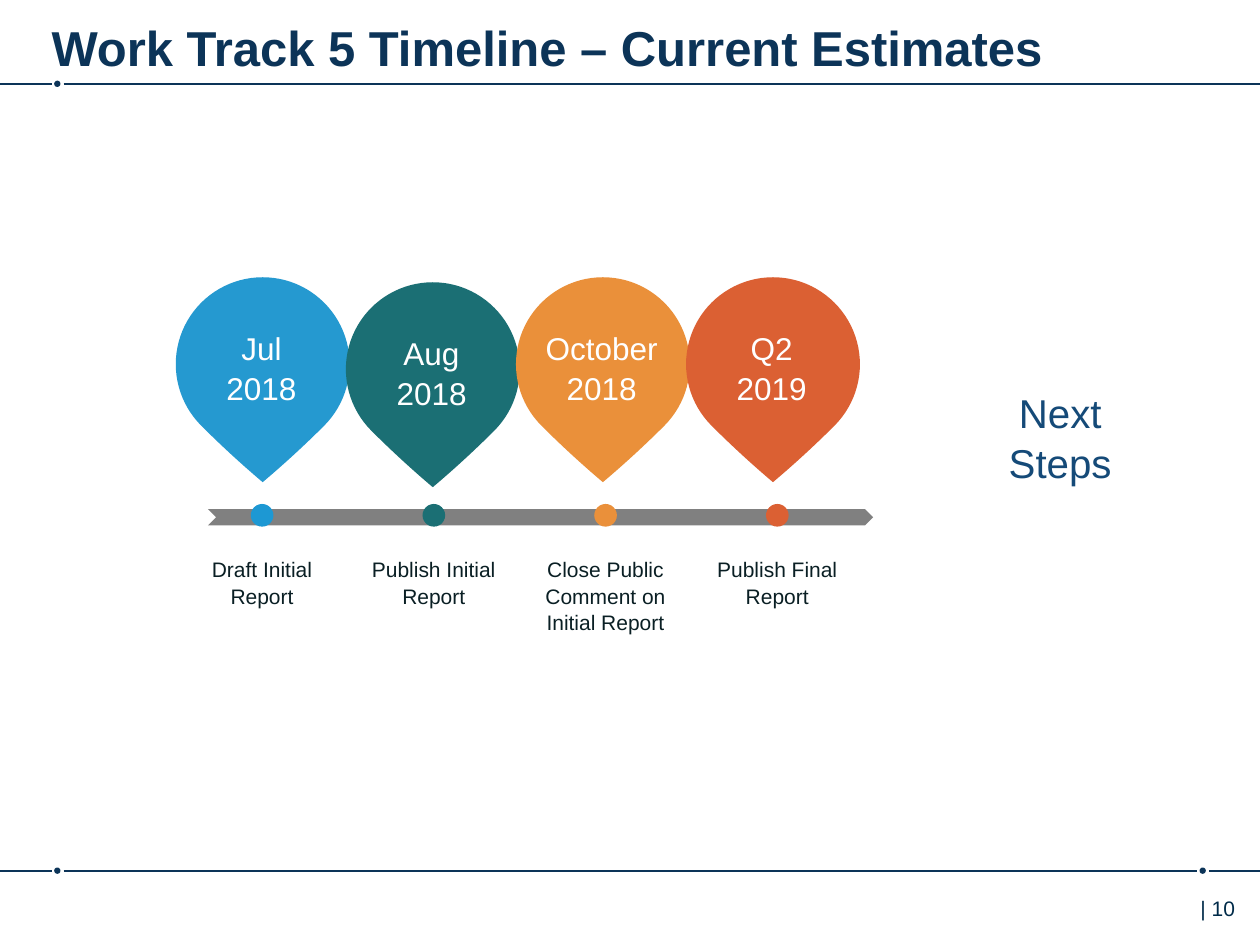
from lxml.etree import SubElement
from pptx import Presentation
from pptx.dml.color import RGBColor
from pptx.enum.shapes import MSO_CONNECTOR, MSO_SHAPE
from pptx.enum.text import MSO_ANCHOR, PP_ALIGN
from pptx.oxml.ns import qn
from pptx.util import Inches, Pt

COLUMNS, ROWS = 100, 75  # grid over a 10 by 7.5 inch slide
NAVY, WHITE = "0C3458", "FFFFFF"


def colour(hex_text):
    return RGBColor.from_string(hex_text)


class TimelinePage:
    font = "Arial"

    def __init__(self, deck):
        self.page = deck.slides.add_slide(deck.slide_layouts[5])
        self.cell_width = deck.slide_width / COLUMNS
        self.cell_height = deck.slide_height / ROWS

    def place(self, column, row, columns, rows):
        return (round(column * self.cell_width), round(row * self.cell_height),
                round(columns * self.cell_width), round(rows * self.cell_height))

    def fill_text(self, frame, text, size, hex_text, align, spacing=1.05, bold=False):
        frame.word_wrap = True
        frame.vertical_anchor = MSO_ANCHOR.TOP
        frame.text = text
        for para in frame.paragraphs:
            para.alignment = align
            para.line_spacing = spacing
            for span in para.runs:
                span.font.name = self.font
                span.font.size = Pt(size)
                span.font.bold = bold
                span.font.color.rgb = colour(hex_text)

    def title(self, area, text):
        box = self.page.shapes.title
        box.left, box.top, box.width, box.height = self.place(*area)
        frame = box.text_frame
        frame.margin_left = frame.margin_right = 0
        frame.margin_top = frame.margin_bottom = Inches(0.05)
        self.fill_text(frame, text, 28, NAVY, PP_ALIGN.LEFT, 1.09, True)

    def text(self, area, text, size, hex_text, align=PP_ALIGN.CENTER):
        box = self.page.shapes.add_textbox(*self.place(*area))
        self.fill_text(box.text_frame, text, size, hex_text, align)

    def shape(self, kind, area, hex_text):
        shape = self.page.shapes.add_shape(kind, *self.place(*area))
        shape.shadow.inherit = False
        shape.fill.solid()
        shape.fill.fore_color.rgb = colour(hex_text)
        shape.line.fill.background()
        return shape

    def dot(self, column, row, size, hex_text):
        self.shape(MSO_SHAPE.OVAL, (column, row, size, size), hex_text)

    def rule(self, start, end, row):
        left, top, width, _ = self.place(start, row, end - start, 0)
        line = self.page.shapes.add_connector(
            MSO_CONNECTOR.STRAIGHT, left, top, left + width, top)
        line.line.color.rgb = colour(NAVY)
        line.line.width = Pt(1)
        SubElement(line._element.spPr, qn("a:effectLst"))

    def pin(self, column, row, text, hex_text):
        drop = self.shape(MSO_SHAPE.TEAR, (column, row, 13.8, 13.8), hex_text)
        drop.adjustments[0] = 0.96
        drop.rotation = 135
        self.text((column + 0.3, row + 3.5, 13, 7.1), text, 18, WHITE)


def main():
    deck = Presentation()
    deck.slide_width, deck.slide_height = Inches(10), Inches(7.5)
    page = TimelinePage(deck)

    # Header and footer rules, broken by dots
    page.title((4.1, 0.5, 87.6, 4.9), "Work Track 5 Timeline – Current Estimates")
    for row, dots in ((6.65, [4.3]), (69.1, [4.3, 95.2])):
        start = 0
        for column in dots:
            page.dot(column, row - 0.25, 0.5, NAVY)
            page.rule(start, column - 0.2, row)
            start = column + 0.75
        page.rule(start, COLUMNS, row)
    page.text((92.9, 70.5, 6.1, 4), "| 10", 12, "002B49", PP_ALIGN.RIGHT)

    # Timeline bar
    page.shape(MSO_SHAPE.CHEVRON, (16.5, 40.4, 52.8, 1.3), "808080")

    # Milestones: pin, dot on the bar, label below; the second pin hangs lower
    milestones = [
        ("Jul\n2018", "Draft Initial Report", "2599D0", "1D98D3", 22),
        ("Aug\n2018", "Publish Initial Report", "1B6F74", "1B6F74", 22.4),
        ("October\n2018", "Close Public Comment on Initial Report",
         "EA903A", "EA903A", 22),
        ("Q2\n2019", "Publish Final Report", "DB6033", "DB6033", 22),
    ]
    for index, (date, label, pin_fill, dot_fill, row) in enumerate(milestones):
        page.pin(13.95 + 13.5 * index, row, date, pin_fill)
        page.dot(19.9 + 13.63 * index, 40, 1.8, dot_fill)
        page.text((14.3 + 13.63 * index, 43.6, 13, 5), label, 12, "0A1F24")

    # Closing note
    page.text((77.1, 30.1, 14.1, 9.1), "Next\nSteps", 23, "154A78")

    deck.save("out.pptx")


if __name__ == "__main__":
    main()
